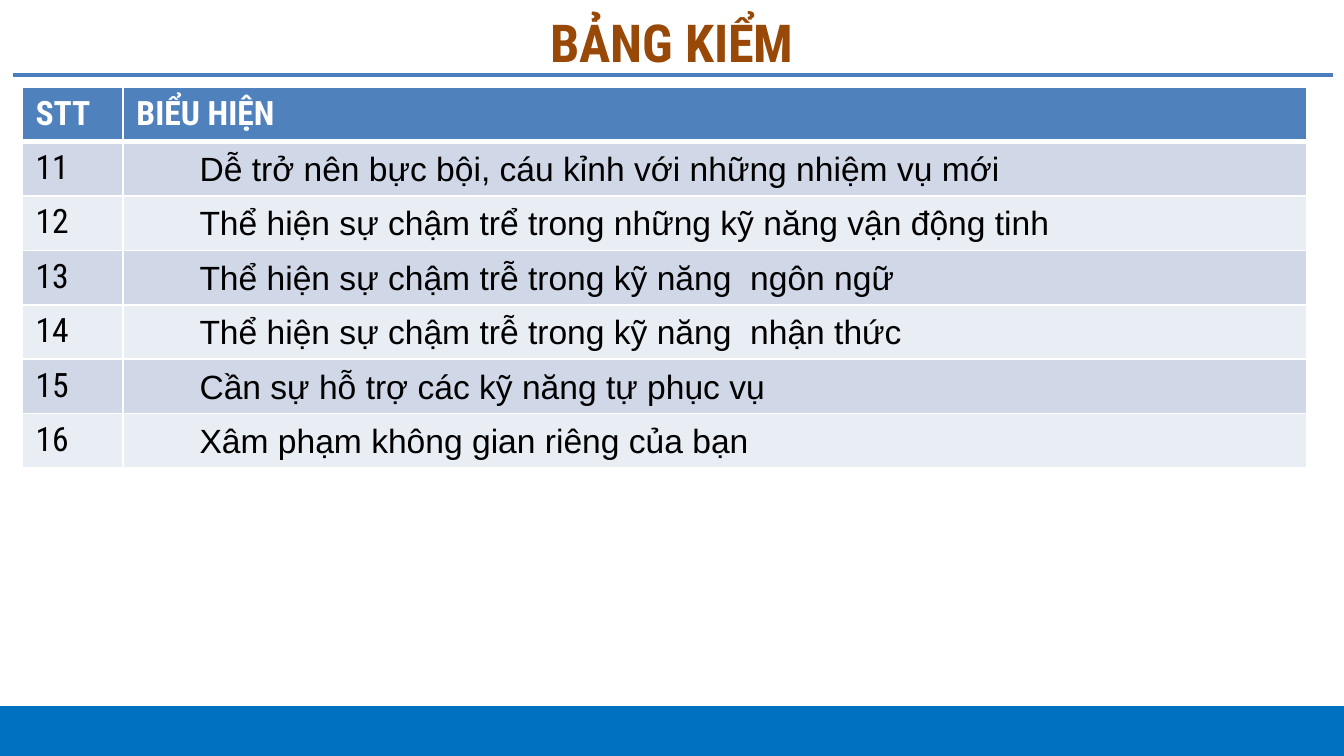
"""Build a checklist slide with a ruled title, a two-column table and a footer bar."""
from dataclasses import dataclass

from lxml import etree
from pptx import Presentation
from pptx.dml.color import RGBColor
from pptx.enum.shapes import MSO_CONNECTOR, MSO_SHAPE
from pptx.enum.text import MSO_ANCHOR, PP_ALIGN
from pptx.oxml.ns import qn
from pptx.util import Inches, Pt

STRAIGHT = MSO_CONNECTOR.STRAIGHT
RECTANGLE = MSO_SHAPE.RECTANGLE
MIDDLE = MSO_ANCHOR.MIDDLE
LEFT, CENTER, JUSTIFY = PP_ALIGN.LEFT, PP_ALIGN.CENTER, PP_ALIGN.JUSTIFY

WIDTH = Inches(10)
HEIGHT = WIDTH * 9 // 16
HEADING_FONT, BODY_FONT = "Roboto Condensed", "Arial"
COLORS = {
    "title": "984807", "rule": "4B7EBC", "footer": "0070C0", "header": "4F81BD",
    "odd": "D0D8E8", "even": "E9EDF4", "white": "FFFFFF", "black": "000000",
}
MARGIN_PERCENT = 1.65
COLUMN_PERCENTS = (7.5, 88.1)
ROW_PERCENT = 7.2
FIRST_NUMBER = 11
SIGNS = (
    "Dễ trở nên bực bội, cáu kỉnh với những nhiệm vụ mới",
    "Thể hiện sự chậm trể trong những kỹ năng vận động tinh",
    "Thể hiện sự chậm trễ trong kỹ năng  ngôn ngữ",
    "Thể hiện sự chậm trễ trong kỹ năng  nhận thức",
    "Cần sự hỗ trợ các kỹ năng tự phục vụ",
    "Xâm phạm không gian riêng của bạn",
)


@dataclass(frozen=True)
class ChecklistRow:
    number: str
    sign: str
    fill: str
    is_header: bool = False


def across(percent: float) -> int:
    return round(WIDTH * percent / 100)


def down(percent: float) -> int:
    return round(HEIGHT * percent / 100)


def rgb(name: str) -> RGBColor:
    return RGBColor.from_string(COLORS[name])


def write(frame, text: str, *, size=18, font=HEADING_FONT, color="black", bold=False,
          align=LEFT, indent=0.0, line_spacing=None, space_after=None) -> None:
    paragraph = frame.paragraphs[0]
    paragraph.alignment = align
    paragraph.line_spacing = line_spacing
    if space_after is not None:
        paragraph.space_after = Pt(space_after)
    if indent:
        properties = paragraph._p.get_or_add_pPr()
        properties.set("marL", str(Inches(indent)))
        properties.set("indent", "0")
    run = paragraph.add_run()
    run.text = text
    run.font.size, run.font.name, run.font.bold = Pt(size), font, bold
    run.font.color.rgb = rgb(color)


def border(cell, **widths: float) -> None:
    properties = cell._tc.get_or_add_tcPr()
    for side in "LRTB":
        line = etree.SubElement(properties, qn(f"a:ln{side}"), w=str(Pt(widths.get(side, 1))))
        fill = etree.SubElement(line, qn("a:solidFill"))
        etree.SubElement(fill, qn("a:srgbClr"), val=COLORS["white"])


def draw_footer(slide) -> None:
    bar = slide.shapes.add_shape(RECTANGLE, across(-0.4), down(93.4), across(100.8), down(6.6))
    bar.shadow.inherit = False
    bar.fill.solid()
    bar.fill.fore_color.rgb = rgb("footer")
    bar.line.fill.background()


def draw_title(slide, text: str) -> None:
    rule = slide.shapes.add_connector(STRAIGHT, across(0.95), down(9.95), across(99.2), down(9.95))
    rule.line.color.rgb = rgb("rule")
    rule.line.width = Pt(2)
    etree.SubElement(rule._element.spPr, qn("a:effectLst"))
    title = slide.shapes.add_textbox(across(MARGIN_PERCENT), down(1), across(96.7), down(9))
    title.text_frame.word_wrap = True
    title.text_frame.vertical_anchor = MIDDLE
    write(title.text_frame, text, size=28, color="title", bold=True, align=CENTER)


def draw_checklist(slide, rows: list[ChecklistRow]) -> None:
    table = slide.shapes.add_table(
        len(rows), len(COLUMN_PERCENTS), across(MARGIN_PERCENT), down(11.55),
        across(sum(COLUMN_PERCENTS)), down(ROW_PERCENT * len(rows))).table
    table.horz_banding = False
    for column, percent in zip(table.columns, COLUMN_PERCENTS):
        column.width = across(percent)
    for index, row in enumerate(rows):
        table.rows[index].height = down(ROW_PERCENT)
        number, sign = table.rows[index].cells
        for cell in (number, sign):
            border(cell, T=3 if index == 1 else 1, B=3 if row.is_header else 1)
            cell.fill.solid()
            cell.fill.fore_color.rgb = rgb(row.fill)
        heading = {"color": "white", "bold": True} if row.is_header else {}
        write(number.text_frame, row.number, **heading)
        if row.is_header:
            write(sign.text_frame, row.sign, **heading)
        else:
            sign.margin_left = sign.margin_right = Inches(0.07)
            sign.margin_top = sign.margin_bottom = 0
            write(sign.text_frame, row.sign, font=BODY_FONT, align=JUSTIFY,
                  indent=0.5, line_spacing=1.25, space_after=10)


def main() -> None:
    deck = Presentation()
    deck.slide_width, deck.slide_height = WIDTH, HEIGHT
    slide = deck.slides.add_slide(deck.slide_layouts[6])
    rows = [ChecklistRow("STT", "BIỂU HIỆN", "header", is_header=True)]
    rows += [ChecklistRow(str(number), sign, "odd" if number % 2 else "even")
             for number, sign in enumerate(SIGNS, FIRST_NUMBER)]
    draw_footer(slide)
    draw_title(slide, "BẢNG KIỂM")
    draw_checklist(slide, rows)
    deck.save("out.pptx")


if __name__ == "__main__":
    main()
